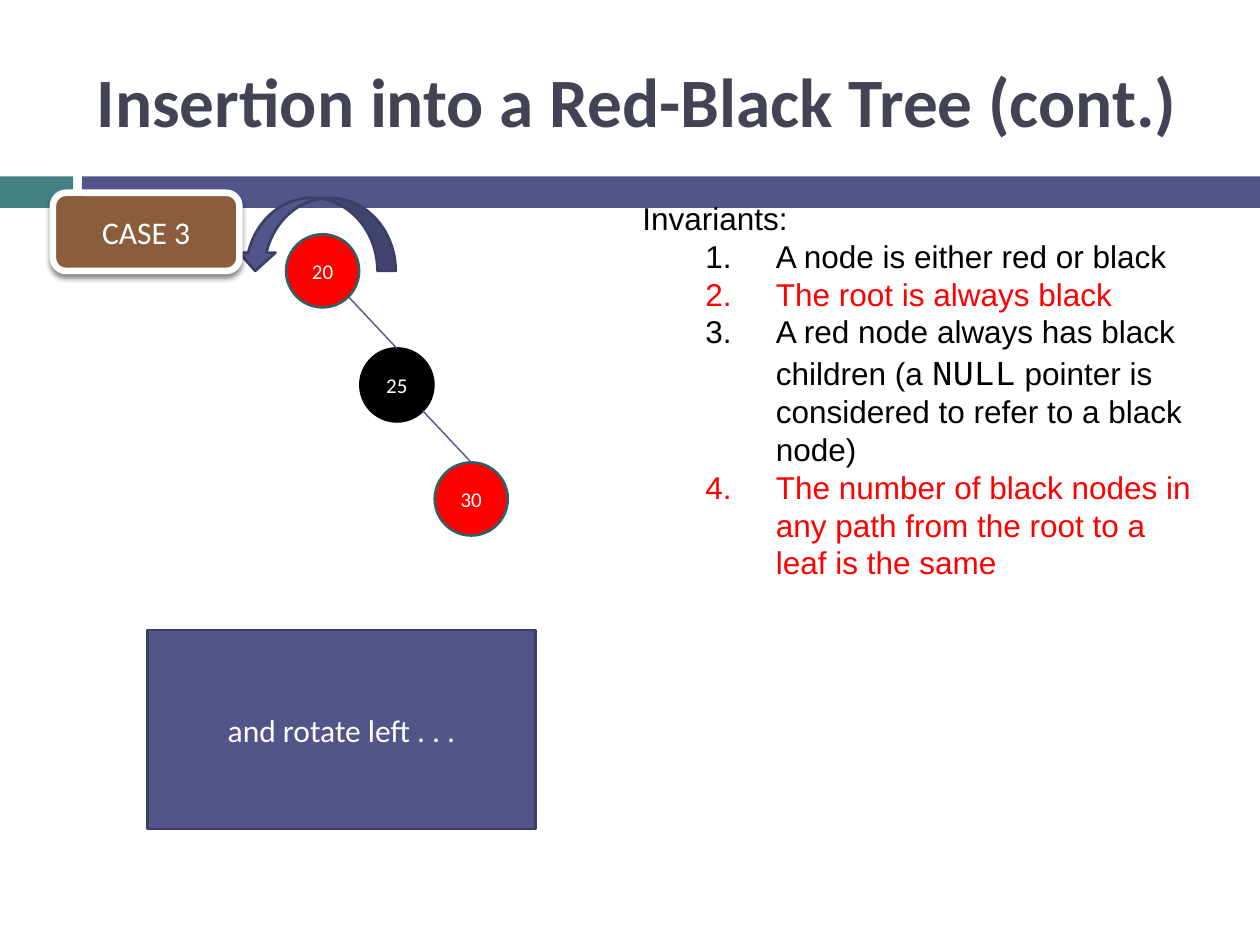
import math

from lxml import etree
from pptx import Presentation
from pptx import util as u
from pptx.dml.color import RGBColor
from pptx.enum import shapes, text
from pptx.oxml import ns

SHAPE = shapes.MSO_SHAPE
INDIGO, INDIGO_DARK = "53548A", "3D3E66"
TEAL, TEAL_DARK = "438086", "325F63"
RED, BLACK, WHITE = "FF0000", "000000", "FFFFFF"
SLATE, BROWN = "424456", "8B5D3D"


def color(value):
    return RGBColor.from_string(value)


def inches(*lengths):
    return [u.Inches(length) for length in lengths]


def add_element(parent, tag, **attributes):
    element = etree.SubElement(parent, ns.qn(tag))
    for name, value in attributes.items():
        element.set(name, str(value))
    return element


def format_run(run, size, font, fill, bold=False):
    run.font.size, run.font.name, run.font.bold = u.Pt(size), font, bold
    run.font.color.rgb = color(fill)


def add_block(slide, kind, box, fill, line=None, width=1.5, label="", size=18):
    """Add a filled preset shape with an optional outline and centred label."""
    shape = slide.shapes.add_shape(kind, *inches(*box))
    shape.shadow.inherit = False
    shape.fill.solid()
    shape.fill.fore_color.rgb = color(fill)
    if line:
        shape.line.color.rgb = color(line)
        shape.line.width = u.Pt(width)
    else:
        shape.line.fill.background()
    if label:
        shape.text_frame.text = label
        shape.text_frame.vertical_anchor = text.MSO_ANCHOR.MIDDLE
        paragraph = shape.text_frame.paragraphs[0]
        paragraph.alignment = text.PP_ALIGN.CENTER
        format_run(paragraph.runs[0], size, "Calibri", WHITE)
    return shape


def add_text_box(slide, box):
    frame = slide.shapes.add_textbox(*inches(*box)).text_frame
    frame.word_wrap = True
    return frame


def add_band(slide, box, accent=0.58, gap=0.07):
    left, top, width, height = box
    add_block(slide, SHAPE.RECTANGLE, (left, top, accent, height), TEAL)
    start = accent + gap
    add_block(slide, SHAPE.RECTANGLE,
              (left + start, top, width - start, height), INDIGO)


def add_title(slide, box, title):
    frame = add_text_box(slide, box)
    frame.vertical_anchor = text.MSO_ANCHOR.MIDDLE
    frame.text = title
    format_run(frame.paragraphs[0].runs[0], 39.6, "Calibri", SLATE, bold=True)


def add_edge(slide, start, end):
    edge = slide.shapes.add_connector(
        shapes.MSO_CONNECTOR.STRAIGHT, *inches(*start, *end))
    edge.line.color.rgb = color(INDIGO)
    edge.line.width = u.Pt(0.79)
    properties = edge._element.spPr
    add_element(properties, "a:effectLst")


def add_tree(slide, box, nodes, diameter=0.58):
    """Place the nodes down the diagonal of the box, joined parent to child."""
    left, top, width, height = box
    step_x = (width - diameter) / (len(nodes) - 1)
    step_y = (height - diameter) / (len(nodes) - 1)
    radius = diameter / 2
    corner = radius * (1 + math.sqrt(0.5))
    for index, (label, fill, line) in enumerate(nodes):
        x, y = left + index * step_x, top + index * step_y
        add_block(slide, SHAPE.OVAL, (x, y, diameter, diameter), fill, line,
                  label=label, size=12)
        if index:
            add_edge(slide, (x - step_x + corner, y - step_y + corner),
                     (x + radius, y))


def add_invariants(slide, box, heading, invariants):
    """Add a heading and numbered items, each a colour and its text parts."""
    frame = add_text_box(slide, box)
    frame.text = heading
    format_run(frame.paragraphs[0].runs[0], 18, "Arial", BLACK)
    for fill, parts in invariants:
        paragraph = frame.add_paragraph()
        paragraph.level = 1
        properties = paragraph._p.get_or_add_pPr()
        properties.set("marL", str(u.Inches(1.06)))
        properties.set("indent", str(u.Inches(-0.56)))
        add_element(properties, "a:buFont", typeface="+mj-lt")
        add_element(properties, "a:buAutoNum", type="arabicPeriod")
        for part in parts:
            run = paragraph.add_run()
            run.text = part
            if part == "NULL":
                format_run(run, 20, "Courier New", fill)
            else:
                format_run(run, 18, "Arial", fill)


def add_case_badge(slide, box, label):
    badge = add_block(slide, SHAPE.ROUNDED_RECTANGLE, box, BROWN, WHITE, 3.75,
                      label)
    effects = badge._element.spPr.find(ns.qn("a:effectLst"))
    shadow = add_element(effects, "a:outerShdw", blurRad=u.Pt(3),
                         dist=u.Pt(2.4), dir=90 * 60000, rotWithShape=0)
    shade = add_element(shadow, "a:srgbClr", val=BLACK)
    add_element(shade, "a:alpha", val=45000)


def main():
    presentation = Presentation()
    presentation.slide_width, presentation.slide_height = inches(10, 7.5)
    slide = presentation.slides.add_slide(presentation.slide_layouts[6])

    add_band(slide, (0, 1.4, 10, 0.25))
    add_title(slide, (0.67, 0.25, 8.92, 1.08),
              "Insertion into a Red-Black Tree (cont.)")
    add_tree(slide, (2.27, 1.86, 1.76, 2.39), [
        ("20", RED, TEAL_DARK),
        ("25", BLACK, BLACK),
        ("30", RED, TEAL_DARK),
    ])
    add_invariants(slide, (5, 1.53, 4.58, 3.27), "Invariants:", [
        (BLACK, ["A node is either red or black"]),
        (RED, ["The root is always black"]),
        (BLACK, ["A red node always has black children (a ", "NULL",
                 " pointer is considered to refer to a black node)"]),
        (RED, ["The number of black nodes in any path from the root to a "
               "leaf is the same"]),
    ])
    add_block(slide, SHAPE.RECTANGLE, (1.17, 5, 3.08, 1.58), INDIGO,
              INDIGO_DARK, label="and rotate left . . .")
    rotation = add_block(slide, SHAPE.CURVED_UP_ARROW,
                         (1.88, 1.57, 1.26, 0.58), INDIGO, INDIGO_DARK)
    rotation.rotation = 180
    add_case_badge(slide, (0.42, 1.53, 1.48, 0.62), "CASE 3")

    presentation.save("out.pptx")


if __name__ == "__main__":
    main()
